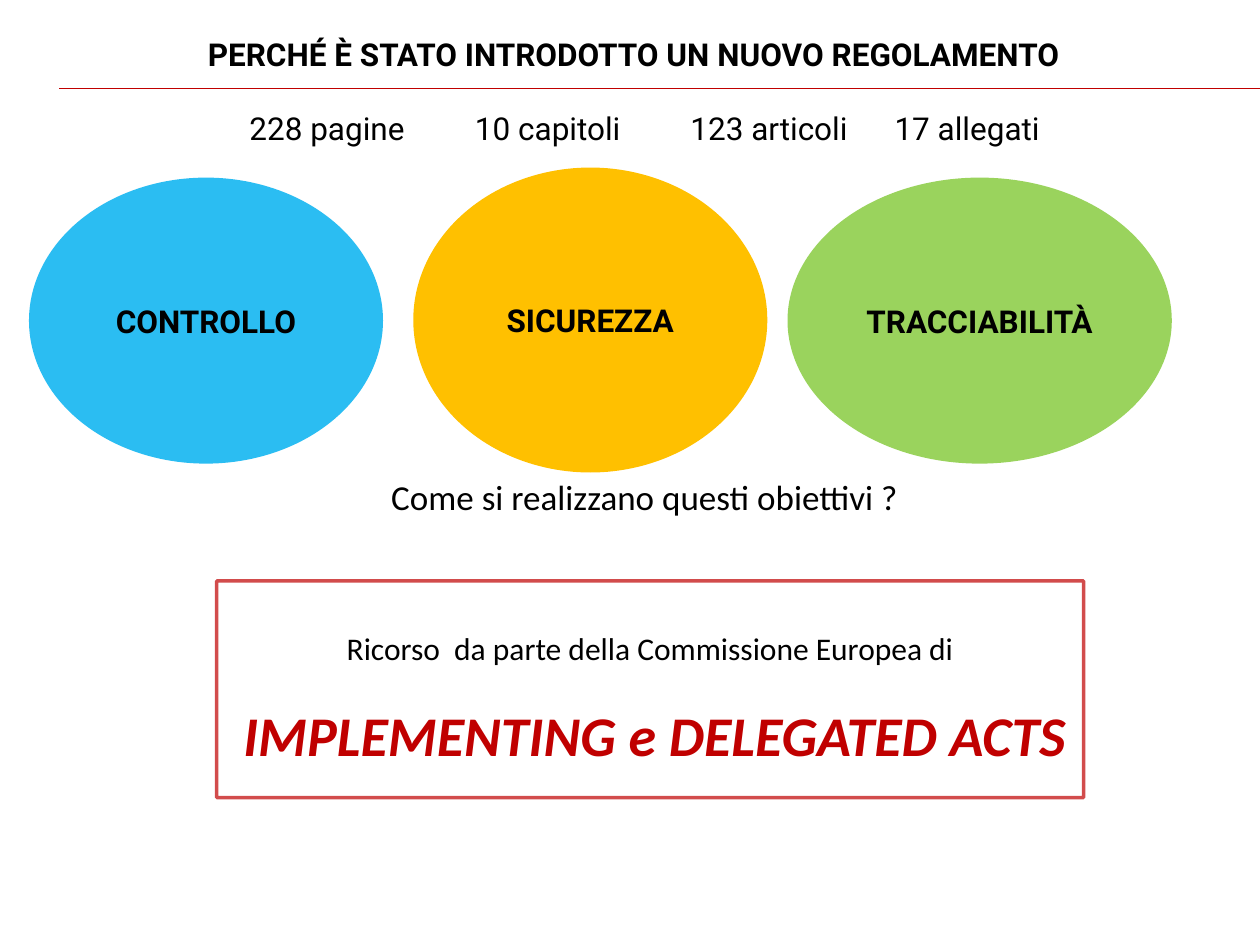
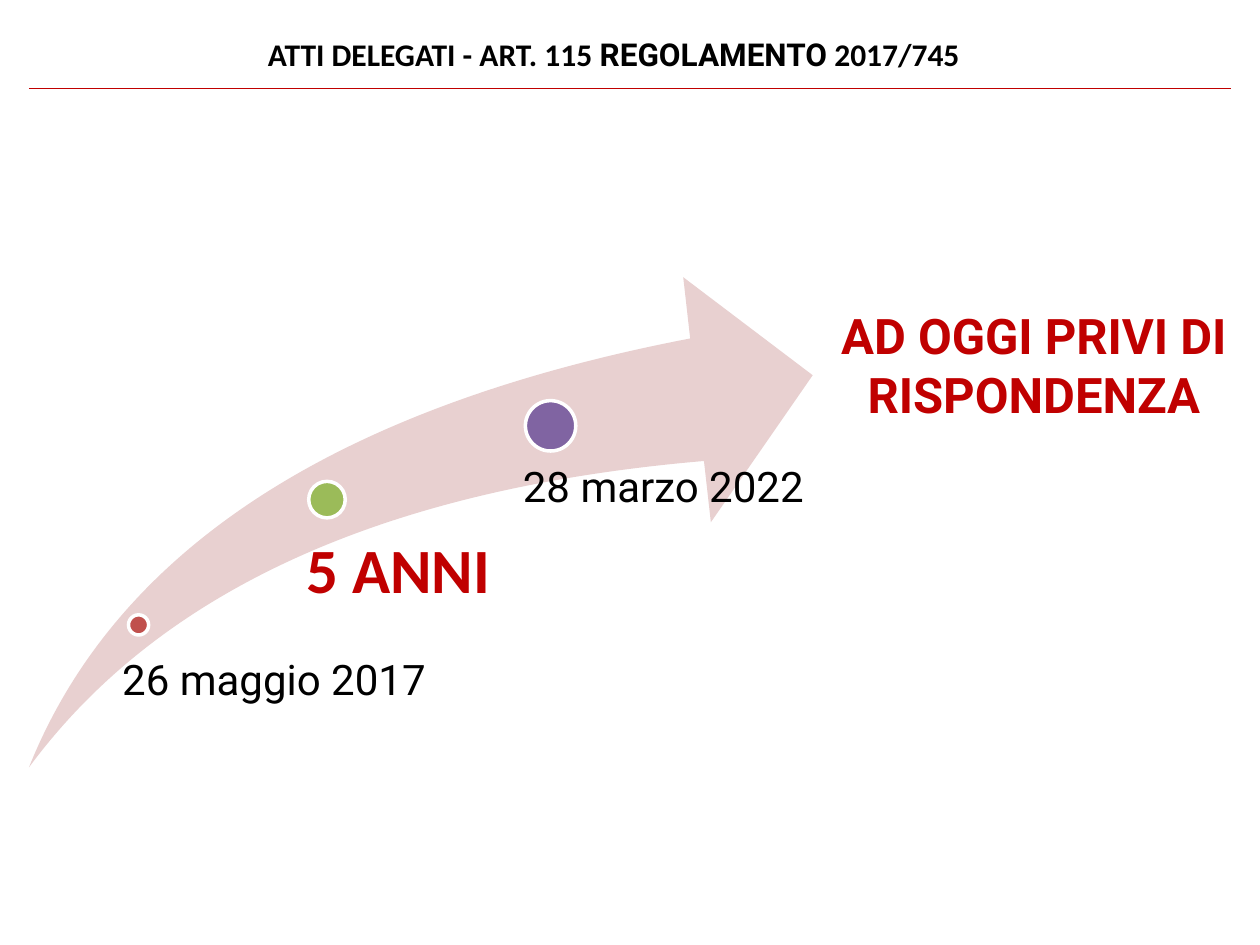
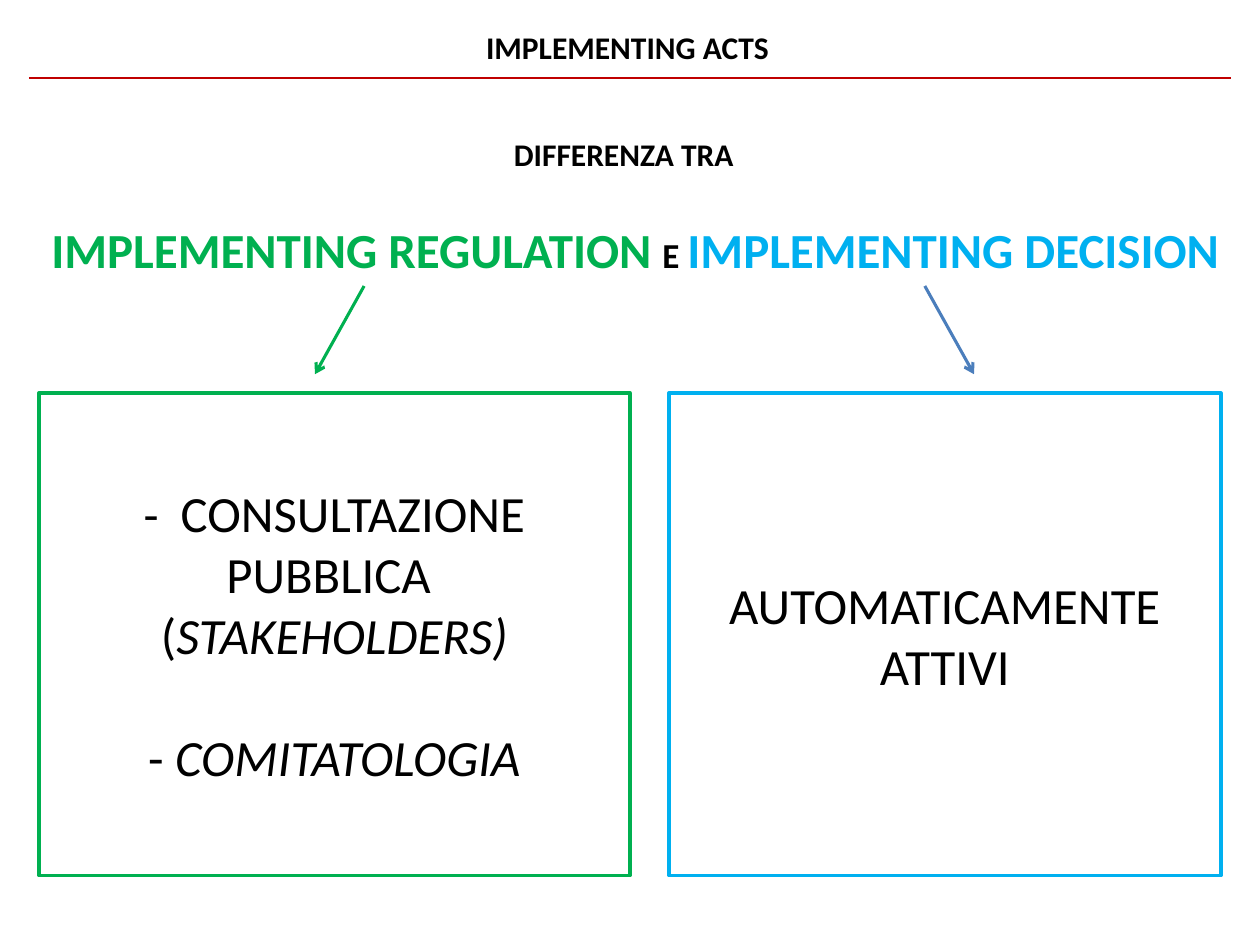
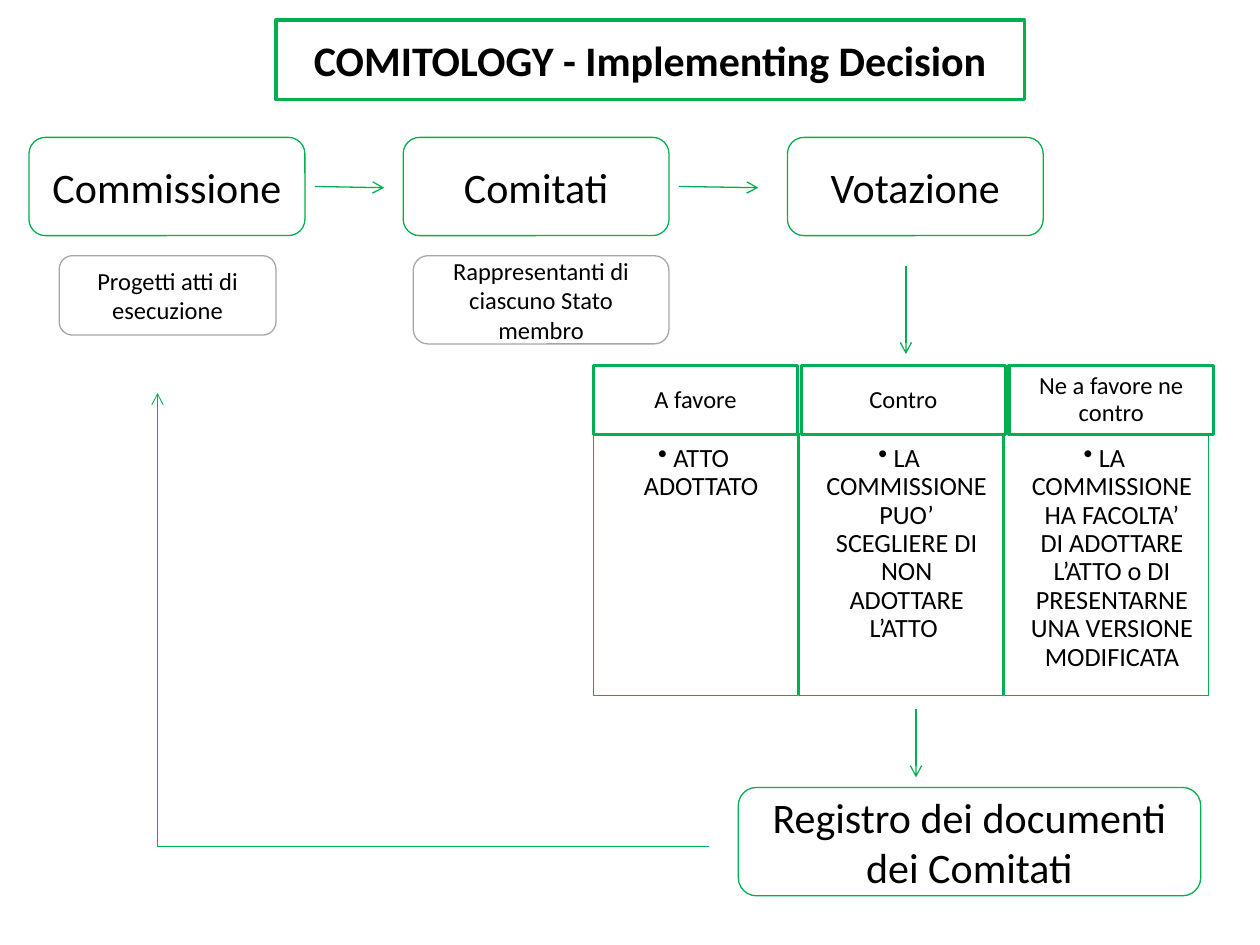
from lxml.etree import SubElement
from pptx import Presentation
from pptx.dml.color import RGBColor
from pptx.enum.shapes import MSO_CONNECTOR, MSO_SHAPE
from pptx.enum.text import MSO_ANCHOR, MSO_AUTO_SIZE, PP_ALIGN
from pptx.oxml.ns import qn
from pptx.util import Inches, Pt

BLACK = RGBColor(0x00, 0x00, 0x00)
WHITE = RGBColor(0xFF, 0xFF, 0xFF)
RED = RGBColor(0xC0, 0x00, 0x00)
GREEN = RGBColor(0x00, 0xB0, 0x50)
SKY = RGBColor(0x00, 0xB0, 0xF0)
AMBER = RGBColor(0xFF, 0xC0, 0x00)
LIME = RGBColor(0x92, 0xD0, 0x50)
GREY = RGBColor(0xA6, 0xA6, 0xA6)
STEEL = RGBColor(0x4B, 0x7E, 0xBC)
PINK = RGBColor(0xE8, 0xD0, 0xD0)
BRICK = RGBColor(0xC0, 0x50, 0x4D)
OLIVE = RGBColor(0x9B, 0xBB, 0x59)
PURPLE = RGBColor(0x80, 0x64, 0xA2)
BODY_FONT = "Calibri"
ACCENT_FONT = "Roboto"


def write(paragraph, *runs, align=PP_ALIGN.CENTER, **style):
    """Fill a paragraph; each run is a text or a (text, style changes) pair."""
    paragraph.alignment = align
    for item in runs:
        text, changes = item if isinstance(item, tuple) else (item, {})
        look = {**style, **changes}
        run = paragraph.add_run()
        run.text = text
        run.font.name = look.get("font", BODY_FONT)
        run.font.size = Pt(look.get("size", 18))
        run.font.bold = look.get("bold", False)
        run.font.italic = look.get("italic", False)
        run.font.color.rgb = look.get("color", BLACK)


def add_box(slide, kind, place, fill=None, line=None, width=0.75, opacity=None,
            anchor=MSO_ANCHOR.MIDDLE):
    """Add a preset shape, or a text box when kind is None."""
    place = [Inches(length) for length in place]
    if kind is None:
        shape = slide.shapes.add_textbox(*place)
    else:
        shape = slide.shapes.add_shape(kind, *place)
        shape.shadow.inherit = False
        if fill is None:
            shape.fill.background()
        else:
            shape.fill.solid()
            shape.fill.fore_color.rgb = fill
        if line is None:
            shape.line.fill.background()
        else:
            shape.line.color.rgb = line
            shape.line.width = Pt(width)
        if opacity:
            color = shape._element.spPr.find(".//" + qn("a:srgbClr"))
            SubElement(color, qn("a:alpha"), val=str(opacity * 1000))
    shape.text_frame.word_wrap = True
    shape.text_frame.vertical_anchor = anchor
    return shape


presentation = Presentation()
presentation.slide_width = Inches(10)
presentation.slide_height = Inches(7.5)

# Slides and their titles
titles = [
    ((0.39, 0, 9.34, 0.86), 18,
     [("PERCHÉ È STATO INTRODOTTO UN NUOVO REGOLAMENTO ", {"font": ACCENT_FONT})]),
    ((0.23, 0, 9.34, 0.86), 18,
     ["ATTI DELEGATI - ART. 115 ", ("REGOLAMENTO", {"font": ACCENT_FONT}), " 2017/745 "]),
    ((0.31, 0.02, 9.34, 0.7), 18, ["IMPLEMENTING ACTS"]),
    ((2.19, 0.16, 5.94, 0.63), 24, ["COMITOLOGY - Implementing Decision"]),
]
slides = []
for place, size, runs in titles:
    slide = presentation.slides.add_slide(presentation.slide_layouts[5])
    title = slide.shapes.title
    title.left, title.top, title.width, title.height = [Inches(length) for length in place]
    title.text_frame.auto_size = MSO_AUTO_SIZE.NONE
    title.text_frame.vertical_anchor = MSO_ANCHOR.MIDDLE
    write(title.text_frame.paragraphs[0], *runs, size=size, bold=True)
    slides.append(slide)
reasons, delegated, implementing, comitology = slides
comitology.shapes.title.line.color.rgb = GREEN
comitology.shapes.title.line.width = Pt(2)

# Slide 1: three goals
goals = [
    ("SICUREZZA", (3.28, 1.33, 2.81, 2.42), AMBER, None),
    ("CONTROLLO", (0.23, 1.41, 2.81, 2.27), SKY, 83),
    ("TRACCIABILITÀ", (6.25, 1.41, 3.05, 2.27), LIME, 92),
]
for text, place, fill, opacity in goals:
    goal = add_box(reasons, MSO_SHAPE.OVAL, place, fill=fill, opacity=opacity)
    write(goal.text_frame.paragraphs[0], text, font=ACCENT_FONT, bold=True)

# Slide 1: figures on tab stops
figures = add_box(reasons, None, (0.55, 0.86, 9.14, 0.31))
figures.text_frame.margin_left = Inches(1.43)
paragraph = figures.text_frame.paragraphs[0]
write(paragraph, "228 pagine\t10 capitoli\t123 articoli\t17 allegati",
      align=PP_ALIGN.LEFT, font=ACCENT_FONT)
tab_list = SubElement(paragraph._p.get_or_add_pPr(), qn("a:tabLst"))
for position in (1.79, 3.5, 5.12):
    SubElement(tab_list, qn("a:tab"), pos=str(Inches(position)), algn="l")

# Slide 1: question and answer
question = add_box(reasons, None, (2.89, 3.59, 4.45, 0.7))
write(question.text_frame.paragraphs[0], "Come si realizzano questi obiettivi ?", size=20)
answer = add_box(reasons, MSO_SHAPE.RECTANGLE, (1.72, 4.61, 6.88, 1.72),
                 line=RED, width=2, opacity=70)
paragraph = answer.text_frame.paragraphs[0]
paragraph.line_spacing = 1.5
write(paragraph, "Ricorso  da parte della Commissione Europea di")
paragraph.add_line_break()
write(paragraph, (" ", {"size": 24}), "IMPLEMENTING e DELEGATED ACTS",
      size=32, color=RED, bold=True, italic=True)

# Slide 2: rising arrow with milestones
arrow = add_box(delegated, MSO_SHAPE.SWOOSH_ARROW, (0.23, 2.2, 6.22, 3.89), fill=PINK)
arrow.adjustments[0] = 0.25
arrow.adjustments[1] = 0.25
milestones = [
    ((1.02, 4.88), 0.16, BRICK, "26 maggio 2017", (0.88, 5.23, 2.85, 0.58), 0.09,
     {"size": 24, "font": ACCENT_FONT}),
    ((2.45, 3.82), 0.29, OLIVE, "5 ANNI", (2.27, 4.28, 2.1, 0.69), 0.16,
     {"size": 36, "color": RED, "bold": True}),
    ((4.17, 3.18), 0.4, PURPLE, "28 marzo 2022", (3.94, 3.7, 2.52, 0.81), 0.21,
     {"size": 24, "font": ACCENT_FONT}),
]
for corner, diameter, fill, text, place, inset, style in milestones:
    add_box(delegated, MSO_SHAPE.OVAL, (*corner, diameter, diameter),
            fill=fill, line=WHITE, width=2)
    label = add_box(delegated, None, place, anchor=MSO_ANCHOR.TOP)
    frame = label.text_frame
    frame.margin_left = Inches(inset)
    frame.margin_top = frame.margin_right = frame.margin_bottom = 0
    frame.paragraphs[0].line_spacing = 0.9
    write(frame.paragraphs[0], text, align=PP_ALIGN.LEFT, **style)
status = add_box(delegated, None, (6.41, 2.5, 3.59, 0.78))
write(status.text_frame.paragraphs[0], "AD OGGI PRIVI DI RISPONDENZA",
      size=28, font=ACCENT_FONT, color=RED, bold=True)

# Slide 3: headings
difference = add_box(implementing, None, (3.98, 1.02, 2.1, 0.4), anchor=MSO_ANCHOR.TOP)
write(difference.text_frame.paragraphs[0], "DIFFERENZA TRA", align=PP_ALIGN.LEFT, bold=True)
kinds = add_box(implementing, None, (0.31, 1.69, 9.53, 0.57), anchor=MSO_ANCHOR.TOP)
write(kinds.text_frame.paragraphs[0],
      ("IMPLEMENTING REGULATION ", {"color": GREEN}),
      ("E ", {"size": 20}),
      ("IMPLEMENTING DECISION", {"color": SKY}),
      align=PP_ALIGN.LEFT, size=28, bold=True)

# Slide 3: the two procedures
regulation = add_box(implementing, MSO_SHAPE.RECTANGLE, (0.31, 3.12, 4.69, 3.83),
                     line=GREEN, width=2)
frame = regulation.text_frame
write(frame.paragraphs[0], ("-  ", {"size": 28}), "CONSULTAZIONE PUBBLICA ", size=29)
write(frame.add_paragraph(), "(", ("STAKEHOLDERS)", {"italic": True}), size=29)
committee = frame.add_paragraph()
committee.space_before = Pt(35)
write(committee, "-", (" COMITATOLOGIA", {"italic": True}), size=29)
decision = add_box(implementing, MSO_SHAPE.RECTANGLE, (5.31, 3.12, 4.38, 3.83),
                   line=SKY, width=2)
write(decision.text_frame.paragraphs[0], "AUTOMATICAMENTE ATTIVI", size=29)

# Slide 4: steps and notes
steps = [
    ("Commissione", (0.23, 1.09, 2.19, 0.78), GREEN, 24),
    ("Comitati", (3.2, 1.09, 2.11, 0.78), GREEN, 24),
    ("Votazione", (6.25, 1.09, 2.03, 0.78), GREEN, 24),
    ("Progetti atti di esecuzione", (0.47, 2.03, 1.72, 0.63), GREY, 14),
    ("Rappresentanti di ciascuno Stato membro", (3.28, 2.03, 2.03, 0.7), GREY, 14),
    ("Registro dei documenti dei Comitati", (5.86, 6.25, 3.67, 0.86), GREEN, 24),
]
for text, place, line, size in steps:
    step = add_box(comitology, MSO_SHAPE.ROUNDED_RECTANGLE, place, line=line)
    write(step.text_frame.paragraphs[0], text, size=size)

# Slide 4: voting outcomes
outcomes = [
    ("A favore", "ATTO ADOTTATO"),
    ("Contro", "LA COMMISSIONE PUO’ SCEGLIERE DI NON ADOTTARE L’ATTO "),
    ("Ne a favore ne contro",
     "LA COMMISSIONE HA FACOLTA’ DI ADOTTARE L’ATTO o DI PRESENTARNE "
     "UNA VERSIONE MODIFICATA"),
]
for column, (vote, effect) in enumerate(outcomes):
    header = add_box(comitology, MSO_SHAPE.RECTANGLE,
                     (4.71 + 1.65 * column, 2.9, 1.62, 0.55), line=GREEN, width=2)
    header.text_frame.paragraphs[0].line_spacing = 0.9
    write(header.text_frame.paragraphs[0], vote, size=14)
    detail = add_box(comitology, MSO_SHAPE.RECTANGLE,
                     (4.71 + 1.63 * column, 3.44, 1.62, 2.08), line=GREEN,
                     anchor=MSO_ANCHOR.TOP)
    frame = detail.text_frame
    frame.margin_left = frame.margin_top = Inches(0.09)
    frame.margin_right = Inches(0.12)
    paragraph = frame.paragraphs[0]
    paragraph.line_spacing = 0.9
    write(paragraph, effect, size=15)
    properties = paragraph._p.get_or_add_pPr()
    properties.set("marL", str(Inches(0.12)))
    properties.set("indent", str(-Inches(0.12)))
    SubElement(properties, qn("a:buChar"), char="•")

# Title rules and arrows on all slides
lines = [
    (reasons, (0.47, 0.7), (10, 0.7), RED, 0.75, False),
    (delegated, (0.23, 0.7), (9.77, 0.7), RED, 0.75, False),
    (implementing, (0.23, 0.62), (9.77, 0.62), RED, 0.75, False),
    (implementing, (2.89, 2.27), (2.5, 2.97), GREEN, 1.75, True),
    (implementing, (7.34, 2.27), (7.73, 2.97), STEEL, 1.75, True),
    (comitology, (2.5, 1.48), (3.05, 1.49), GREEN, 0.75, True),
    (comitology, (5.39, 1.48), (6.02, 1.49), GREEN, 0.75, True),
    (comitology, (7.19, 2.11), (7.19, 2.81), GREEN, 0.75, True),
    (comitology, (7.27, 5.63), (7.27, 6.17), GREEN, 0.75, True),
    (comitology, (5.63, 6.72), (1.25, 6.72), GREEN, 0.75, False),
    (comitology, (1.25, 6.72), (1.25, 3.12), GREEN, 0.5, True),
]
for slide, start, end, color, width, has_head in lines:
    connector = slide.shapes.add_connector(
        MSO_CONNECTOR.STRAIGHT, *[Inches(length) for length in start + end])
    connector.line.color.rgb = color
    connector.line.width = Pt(width)
    properties = connector._element.spPr
    if has_head:
        SubElement(properties.find(qn("a:ln")), qn("a:tailEnd"), type="arrow")
    SubElement(properties, qn("a:effectLst"))

presentation.save("out.pptx")
